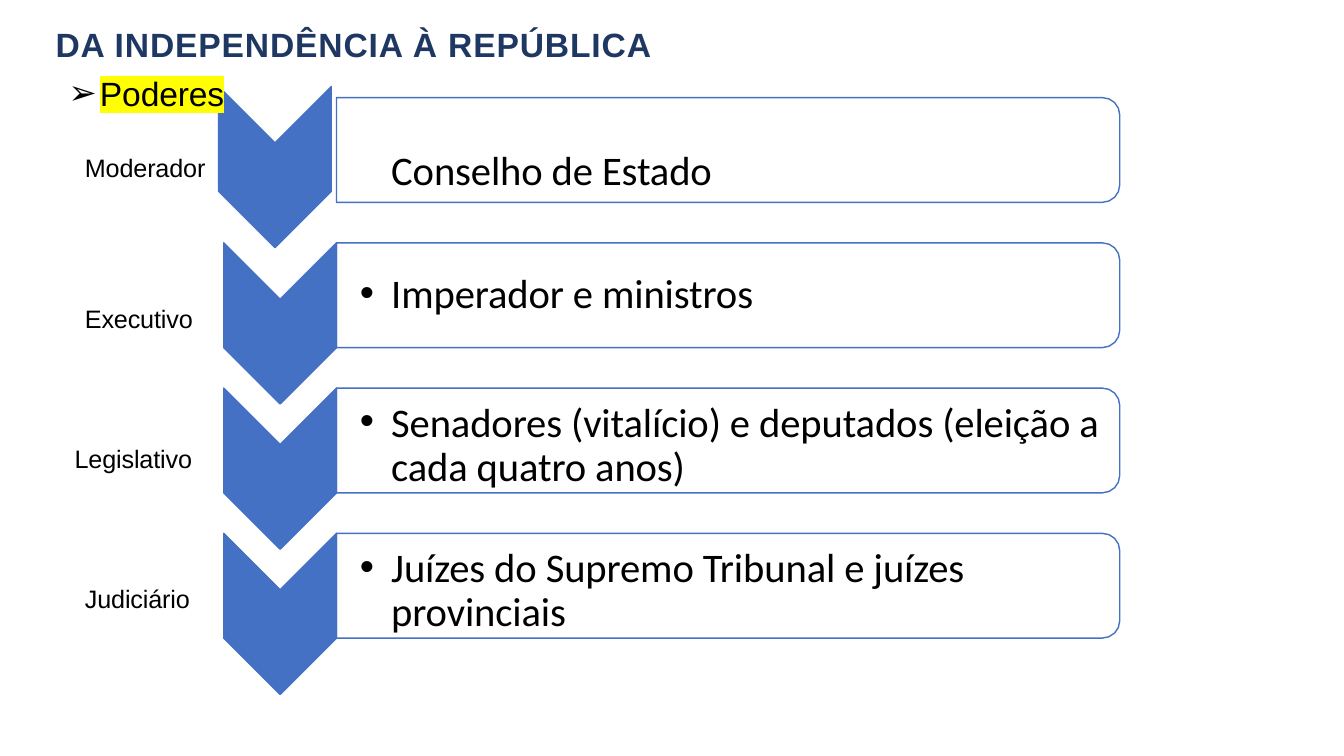
import math

import pptx
import pptx.dml.color
import pptx.enum.text
import pptx.oxml
import pptx.oxml.ns
import pptx.util

Cm, Pt, qn = pptx.util.Cm, pptx.util.Pt, pptx.oxml.ns.qn
COLOURS = {"blue": "4471C4", "navy": "1F3863", "black": "000000",
           "white": "FFFFFF", "yellow": "FFFF00"}
FORMATS = {
    "title": {"name": "Arial", "size": Pt(24), "bold": True},
    "heading": {"name": "Arial", "size": Pt(24), "bold": False},
    "label": {"name": "Arial", "size": Pt(18)},
    "holder": {"name": "Calibri", "size": Pt(29)},
}
FRAME = {"word_wrap": True, "margin_left": 0, "margin_right": 0, "margin_bottom": 0,
         "auto_size": pptx.enum.text.MSO_AUTO_SIZE.NONE,
         "vertical_anchor": pptx.enum.text.MSO_ANCHOR.TOP}


def apply(target, values):
    for name, value in values.items():
        setattr(target, name, value)


def rgb(name):
    return pptx.dml.color.RGBColor.from_string(COLOURS[name])


class PowersSlide:
    def __init__(self, deck):
        self.slide = deck.slides.add_slide(deck.slide_layouts[1])
        self.shapes = self.slide.shapes

    def fill_text(self, box, text, style, colour="black", tracking=-10, inset=0,
                  bullet=None, margin=0.0, leading=None):
        """Fill a box with one paragraph; margin is the hanging indent in cm."""
        apply(box.text_frame, {**FRAME, "margin_top": Cm(inset)})
        paragraph = box.text_frame.paragraphs[0]
        properties = paragraph._p.get_or_add_pPr()
        hang = 0.79 if bullet else 0
        properties.set("marL", str(Cm(margin)))
        properties.set("indent", str(-Cm(hang)))
        if bullet:
            font = pptx.oxml.parse_xml(
                f'<a:buFont {pptx.oxml.ns.nsdecls("a")} typeface="Arial"/>')
            mark = pptx.oxml.parse_xml(
                f'<a:buChar {pptx.oxml.ns.nsdecls("a")} char="{bullet}"/>')
            properties.extend([font, mark])
        apply(paragraph, {"space_before": Pt(0), "line_spacing": leading,
                          "alignment": pptx.enum.text.PP_ALIGN.LEFT})
        run = paragraph.add_run()
        run.text = text
        apply(run.font, FORMATS[style])
        run.font.color.rgb = rgb(colour)
        run._r.get_or_add_rPr().set("spc", str(tracking))
        return run

    def place(self, box, left, top, width, height):
        apply(box, {"left": Cm(left), "top": Cm(top),
                    "width": Cm(width), "height": Cm(height)})
        return box

    def title(self, text, *place):
        box = self.place(self.shapes.title, *place)
        self.fill_text(box, text, "title", "navy", tracking=61)

    def heading(self, text, *place):
        box = self.place(self.slide.placeholders[1], *place)
        run = self.fill_text(box, text, "heading", bullet="➢", margin=1.12)
        highlight = pptx.oxml.parse_xml(
            f'<a:highlight {pptx.oxml.ns.nsdecls("a")}>'
            f'<a:srgbClr val="{COLOURS["yellow"]}"/></a:highlight>')
        run._r.rPr.find(qn("a:solidFill")).addnext(highlight)
        # The heading overlaps the first chevron and stays in front of it
        box.element.getparent().append(box.element)

    def text(self, text, style, left, top, width, height, **options):
        box = self.shapes.add_textbox(Cm(left), Cm(top), Cm(width), Cm(height))
        self.fill_text(box, text, style, **options)

    def outline(self, points, fill):
        start, *rest = [(Cm(x), Cm(y)) for x, y in points]
        builder = self.shapes.build_freeform(*start)
        builder.add_line_segments(rest, close=True)
        shape = builder.convert_to_shape()
        shape.shadow.inherit = False
        shape.fill.solid()
        shape.fill.fore_color.rgb = rgb(fill)
        shape.line.color.rgb = rgb("blue")
        shape.line.width = Pt(1)

    def chevron(self, left, top, width=2.84, side=2.64):
        middle, right, point = left + width / 2, left + width, width / 2
        self.outline([(right, top), (right, top + side), (middle, top + side + point),
                      (left, top + side), (left, top), (middle, top + point)], "blue")

    def panel(self, left, top, width=19.74, height=2.64, radius=0.44):
        right, bottom = left + width, top + height
        corners = []
        for centre_y, first in ((top + radius, -90), (bottom - radius, 0)):
            for step in range(5):
                angle = math.radians(first + step * 22.5)
                corners.append((right - radius + radius * math.cos(angle),
                                centre_y + radius * math.sin(angle)))
        self.outline([(left, top), *corners, (left, bottom)], "white")


def main():
    deck = pptx.Presentation()
    apply(deck, {"slide_width": Cm(33.87), "slide_height": Cm(19.05)})
    powers = PowersSlide(deck)
    powers.title("DA INDEPENDÊNCIA À REPÚBLICA", 1.4, 0.6, 20, 1.1)

    # Power, label left and top, chevron shift, holder and its box
    one_line = {"inset": 0.07}
    bulleted = {"inset": 0.07, "bullet": "•", "margin": 0.84}
    two_lines = {**bulleted, "inset": 0.32, "leading": Pt(31.8)}
    rows = [
        ("Moderador", 2.14, 3.78, (-0.13, -0.28),
         "Conselho de Estado", (9.86, 3.58, 9.5, 1.3), one_line),
        ("Executivo", 2.14, 7.57, (0, 0),
         "Imperador e ministros", (9.02, 6.68, 11, 1.3), bulleted),
        ("Legislativo", 1.88, 11.1, (0, 0),
         "Senadores (vitalício) e deputados (eleição a cada quatro anos)",
         (9.02, 9.78, 18.85, 2.41), two_lines),
        ("Judiciário", 2.14, 14.63, (0, 0),
         "Juízes do Supremo Tribunal e juízes provinciais",
         (9.02, 13.44, 15.44, 2.41), two_lines),
    ]
    for index, (power, left, top, shift, holder, place, options) in enumerate(rows):
        row_top = 2.46 + 3.66 * index
        powers.panel(8.48, row_top)
        powers.chevron(5.64 + shift[0], row_top + shift[1])
        powers.text(power, "label", left, top, 3.3, 0.81, inset=0.07)
        powers.text(holder, "holder", *place, **options)

    powers.heading("Poderes", 1.4, 1.83, 8, 1.1)
    deck.save("out.pptx")


if __name__ == "__main__":
    main()
